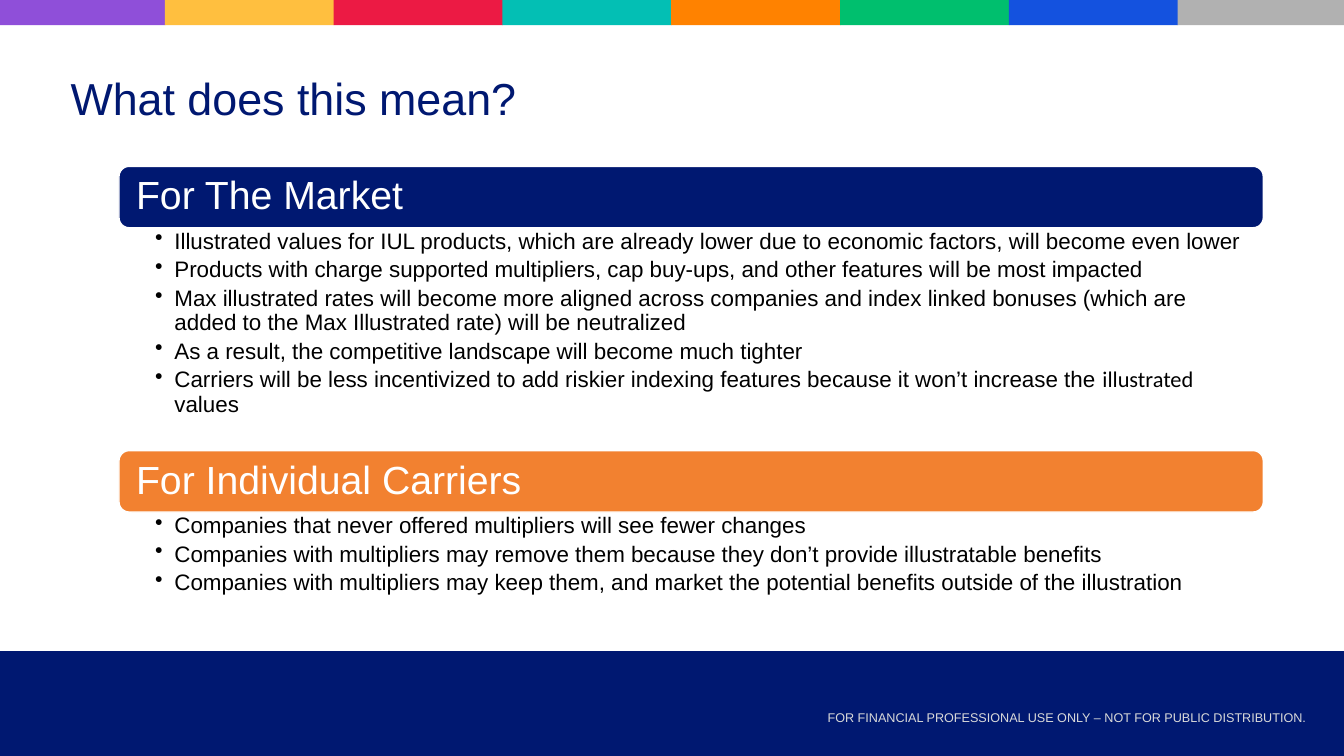
from dataclasses import dataclass

from lxml import etree
from pptx import Presentation
from pptx.dml.color import RGBColor
from pptx.enum.shapes import MSO_SHAPE
from pptx.enum.text import MSO_ANCHOR, PP_ALIGN
from pptx.oxml.ns import qn
from pptx.util import Inches, Pt

RECTANGLE = MSO_SHAPE.RECTANGLE
ROUNDED = MSO_SHAPE.ROUNDED_RECTANGLE
TOP, MIDDLE = MSO_ANCHOR.TOP, MSO_ANCHOR.MIDDLE
LEFT, RIGHT = PP_ALIGN.LEFT, PP_ALIGN.RIGHT


@dataclass(frozen=True)
class Theme:
    font: str = "Arial"
    accent_font: str = "Calibri"
    navy: str = "001871"
    orange: str = "F28130"
    white: str = "FFFFFF"
    black: str = "000000"
    pale: str = "D9D9D9"
    stripes: tuple = ("8F4FD9", "FFBF3F", "EC1A44", "03BFB4",
                      "FF8200", "00BF6E", "1452DF", "B1B1B1")
    title_size: int = 32
    banner_size: int = 28
    body_size: int = 16
    footer_size: int = 9
    line_spacing: float = 0.9


SECTIONS = [
    (1.65, 2.21, "navy", "For The Market", [
        "Illustrated values for IUL products, which are already lower due to economic factors, "
        "will become even lower",
        "Products with charge supported multipliers, cap buy-ups, and other features will be "
        "most impacted",
        "Max illustrated rates will become more aligned across companies and index linked bonuses "
        "(which are added to the Max Illustrated rate) will be neutralized",
        "As a result, the competitive landscape will become much tighter",
        ("Carriers will be less incentivized to add riskier indexing features because it won’t "
         "increase the ", "illustrated ", "values"),
    ]),
    (4.47, 1.16, "orange", "For Individual Carriers", [
        "Companies that never offered multipliers will see fewer changes",
        "Companies with multipliers may remove them because they don’t provide illustratable "
        "benefits",
        "Companies with multipliers may keep them, and market the potential benefits outside of "
        "the illustration",
    ]),
]
SECTION_LEFT, SECTION_WIDTH, BANNER_HEIGHT = 1.18, 11.35, 0.61
STRIPE_START, STRIPE_END, STRIPE_WIDTH = -0.04, 11.68, 1.68


class SlideBuilder:
    def __init__(self, page, theme):
        self.page = page
        self.theme = theme

    def style_span(self, span, size, color, font=None):
        span.font.name = font or self.theme.font
        span.font.size = Pt(size)
        span.font.color.rgb = RGBColor.from_string(color)

    def set_frame(self, box, margins, anchor):
        """Wrap the text and set margins in the order left, top, right, bottom."""
        frame = box.text_frame
        frame.word_wrap = True
        frame.vertical_anchor = anchor
        (frame.margin_left, frame.margin_top,
         frame.margin_right, frame.margin_bottom) = map(Inches, margins)
        return frame

    def write_line(self, box, text, size, color, margin=0, align=LEFT, anchor=MIDDLE):
        frame = self.set_frame(box, (margin,) * 4, anchor)
        frame.text = text
        para = frame.paragraphs[0]
        para.alignment = align
        para.line_spacing = self.theme.line_spacing
        self.style_span(para.runs[0], size, color)

    def block(self, area, color, kind=RECTANGLE):
        shape = self.page.shapes.add_shape(kind, *map(Inches, area))
        shape.shadow.inherit = False
        shape.fill.solid()
        shape.fill.fore_color.rgb = RGBColor.from_string(color)
        shape.line.fill.background()
        return shape

    def text_box(self, area):
        return self.page.shapes.add_textbox(*map(Inches, area))

    def label(self, area, text, size, color, **layout):
        self.write_line(self.text_box(area), text, size, color, **layout)

    def banner(self, area, text, color):
        shape = self.block(area, color, ROUNDED)
        shape.line.color.rgb = RGBColor.from_string(self.theme.white)
        shape.line.width = Pt(1)
        self.write_line(shape, text, self.theme.banner_size, self.theme.white, margin=0.14)

    def bullets(self, area, items):
        """Write a bullet list; the second part of a tuple takes the accent font."""
        frame = self.set_frame(self.text_box(area), (0.36, 0.02, 0.12, 0.02), TOP)
        for index, item in enumerate(items):
            para = frame.add_paragraph() if index else frame.paragraphs[0]
            self.add_bullet(para)
            parts = item if isinstance(item, tuple) else (item,)
            for position, part in enumerate(parts):
                span = para.add_run()
                span.text = part
                font = self.theme.accent_font if position == 1 else self.theme.font
                self.style_span(span, self.theme.body_size, self.theme.black, font)

    def add_bullet(self, para):
        para.level = 1
        para.line_spacing = self.theme.line_spacing
        para.space_after = Pt(self.theme.body_size * 0.2)
        properties = para._p.get_or_add_pPr()
        properties.set("marL", str(Inches(0.19)))
        properties.set("indent", str(-Inches(0.19)))
        etree.SubElement(properties, qn("a:buChar")).set("char", "•")


def main():
    deck = Presentation()
    deck.slide_width, deck.slide_height = Inches(13.33), Inches(7.5)
    theme = Theme()
    builder = SlideBuilder(deck.slides.add_slide(deck.slide_layouts[6]), theme)

    builder.block((0, 6.46, 13.33, 1.04), theme.navy)
    builder.label((1.92, 7.06, 11.03, 0.18),
                  "FOR FINANCIAL PROFESSIONAL USE ONLY – NOT FOR PUBLIC DISTRIBUTION.",
                  theme.footer_size, theme.pale, align=RIGHT, anchor=TOP)

    stripe_step = (STRIPE_END - STRIPE_START) / (len(theme.stripes) - 1)
    for index, color in enumerate(theme.stripes):
        builder.block((STRIPE_START + index * stripe_step, 0, STRIPE_WIDTH, 0.25), color)

    builder.label((0.7, 0.5, 11.7, 1), "What does this mean?", theme.title_size, theme.navy)

    for top, list_height, color_name, heading, items in SECTIONS:
        builder.banner((SECTION_LEFT, top, SECTION_WIDTH, BANNER_HEIGHT),
                       heading, getattr(theme, color_name))
        builder.bullets((SECTION_LEFT, top + BANNER_HEIGHT, SECTION_WIDTH, list_height), items)

    deck.save("out.pptx")


if __name__ == "__main__":
    main()
